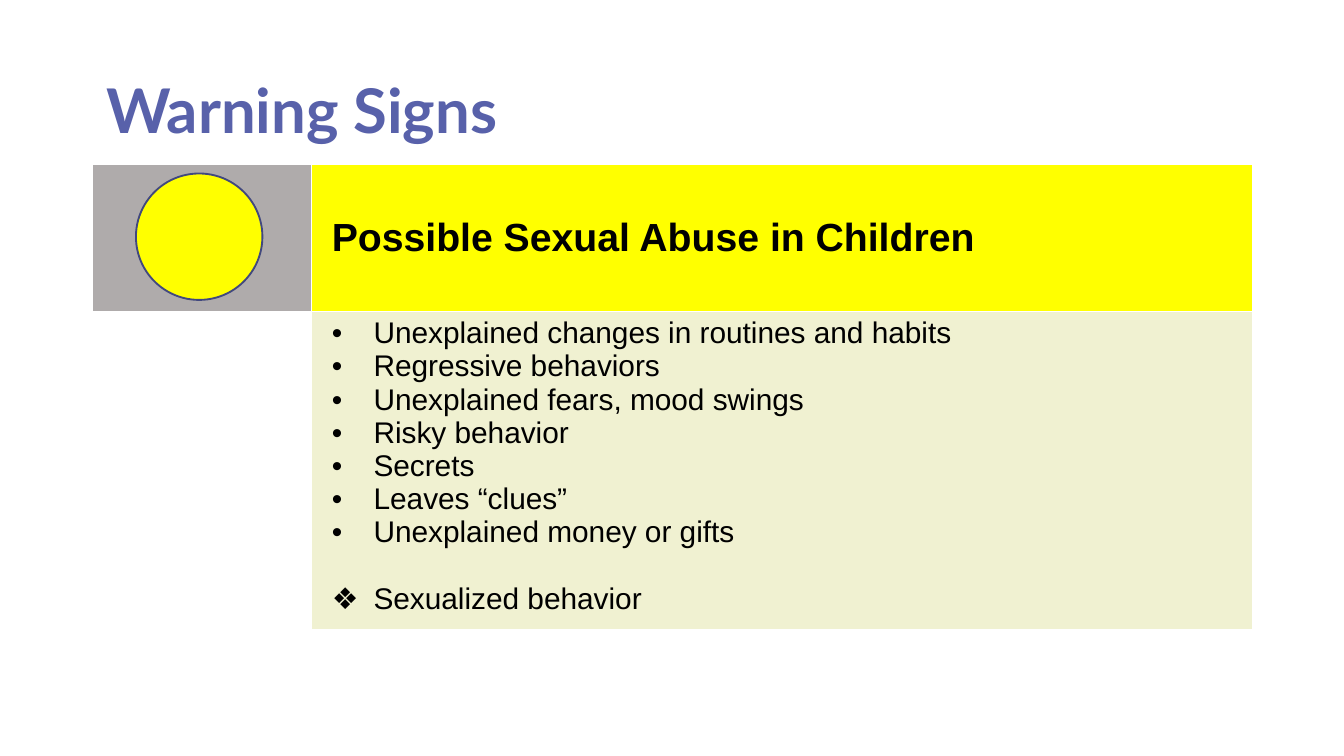
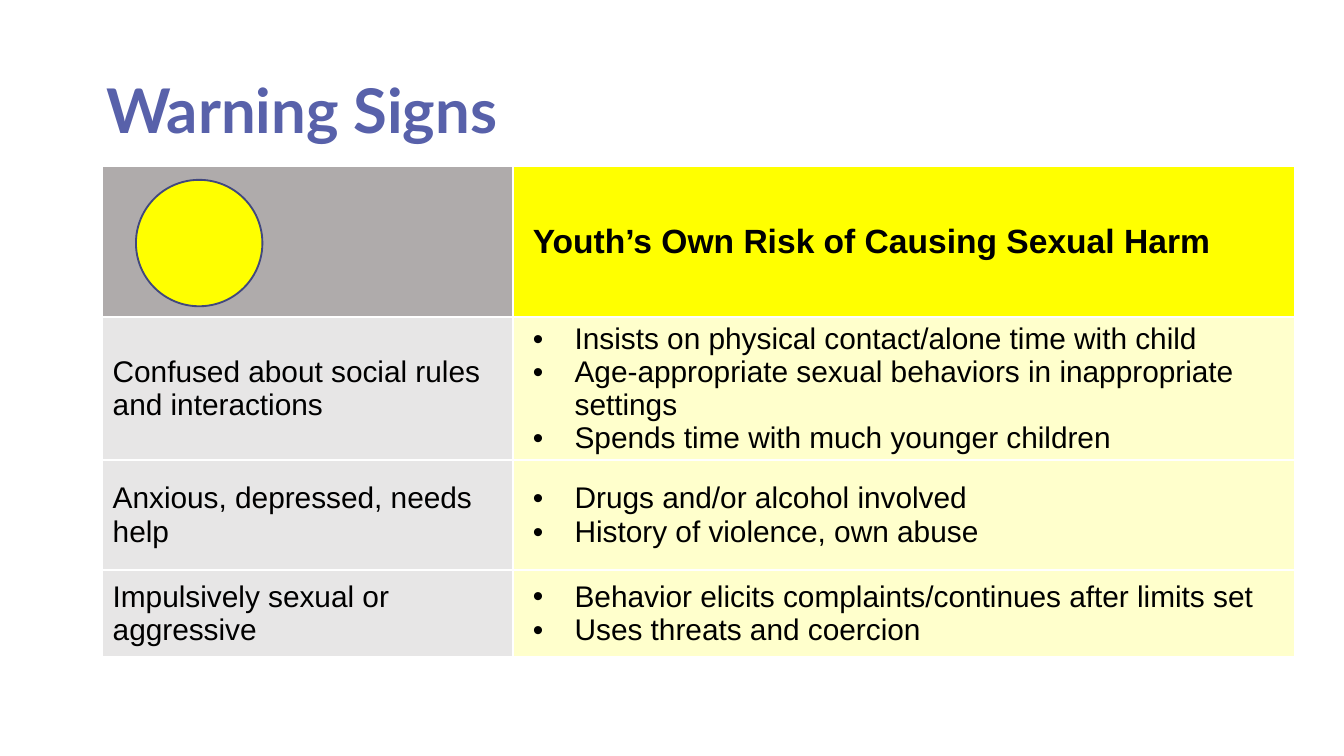
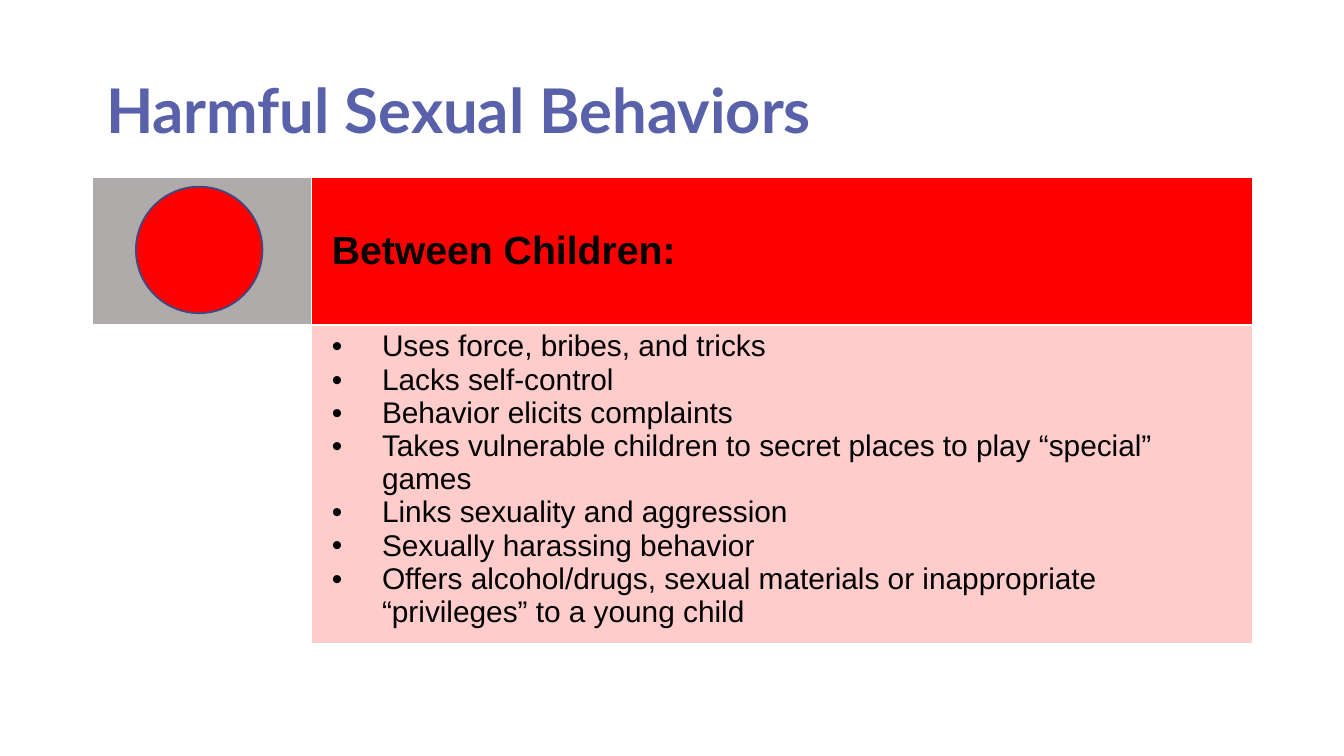
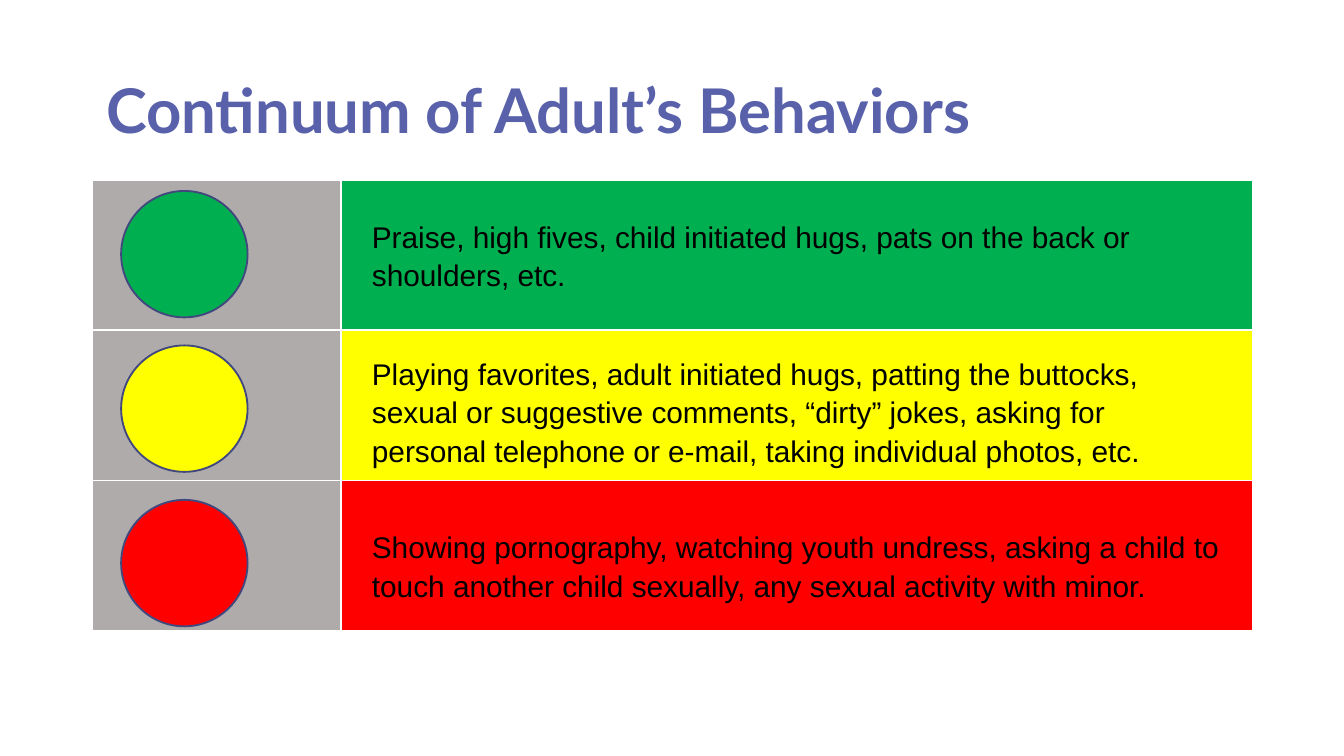
from dataclasses import dataclass

from lxml import etree
from pptx import Presentation
from pptx.dml.color import RGBColor
from pptx.enum import shapes, text
from pptx.oxml import ns
from pptx.util import Cm, Pt

INDIGO = RGBColor(0x58, 0x61, 0xAA)
NAVY = RGBColor(0x41, 0x48, 0x7E)
BLACK = RGBColor(0, 0, 0)
WHITE = RGBColor(0xFF, 0xFF, 0xFF)
GRAY = RGBColor(0xAF, 0xAB, 0xAB)
PALE = RGBColor(0xE7, 0xE6, 0xE6)
GREEN = RGBColor(0, 0xB0, 0x50)
YELLOW = RGBColor(0xFF, 0xFF, 0)
RED = RGBColor(0xFF, 0, 0)
OLIVE = RGBColor(0xB8, 0xB9, 0x1A)

LEFT = 1.75
LIGHT = 2.39
MIDDLE = text.MSO_ANCHOR.MIDDLE
TOP = text.MSO_ANCHOR.TOP


@dataclass
class Cell:
    fill: RGBColor | None = None
    lines: tuple[str, ...] = ()
    size: float = 16
    bold: bool = False
    tint: int = 100
    hang: float = 0
    inset: float = 0.38
    anchor: text.MSO_ANCHOR = MIDDLE
    mark: str = ""


@dataclass
class Grid:
    left: float
    top: float
    cols: tuple[float, ...]
    rows: tuple[float, ...]
    cells: list[list[Cell]]


@dataclass
class Note:
    top: float
    width: float
    height: float
    words: str


def add_sub(parent, tag: str, **attrs: str):
    return etree.SubElement(parent, ns.qn(tag), attrs)


def add_run(para, words: str, size: float, color=BLACK, font="Arial", bold=False) -> None:
    run = para.add_run()
    run.text = words
    run.font.size = Pt(size)
    run.font.name = font
    run.font.bold = bold
    run.font.color.rgb = color


def add_page(deck, title: str):
    slide = deck.slides.add_slide(deck.slide_layouts[5])
    head = slide.shapes.title
    head.left, head.top, head.width, head.height = Cm(LEFT), Cm(0.76), Cm(21.9), Cm(2.77)
    frame = head.text_frame
    frame.auto_size = text.MSO_AUTO_SIZE.NONE
    frame.vertical_anchor = MIDDLE
    para = frame.paragraphs[0]
    para.alignment = text.PP_ALIGN.LEFT
    para.line_spacing = 0.9
    add_run(para, title, 33, INDIGO, "Lato", True)
    return slide


def set_bullet(para, mark: str, hang: float) -> None:
    props = para._p.get_or_add_pPr()
    props.set("marL", str(Cm(hang)))
    props.set("indent", str(-Cm(hang)))
    add_sub(props, "a:buFont", typeface="Arial")
    add_sub(props, "a:buChar", char=mark)


def set_edges(cell) -> None:
    props = cell._tc.get_or_add_tcPr()
    for spot, side in enumerate("LRTB"):
        edge = etree.Element(ns.qn(f"a:ln{side}"), w=str(Pt(1)))
        add_sub(add_sub(edge, "a:solidFill"), "a:srgbClr", val=str(WHITE))
        props.insert(spot, edge)


def fill_cell(cell, data: Cell) -> None:
    if data.fill is None:
        cell.fill.background()
    else:
        cell.fill.solid()
        cell.fill.fore_color.rgb = data.fill
        if data.tint < 100:
            color = cell._tc.tcPr.find(".//" + ns.qn("a:srgbClr"))
            add_sub(color, "a:alpha", val=str(data.tint * 1000))
    set_edges(cell)
    cell.vertical_anchor = data.anchor
    cell.margin_left, cell.margin_right = Cm(data.inset), Cm(0.19)
    cell.margin_top = cell.margin_bottom = Cm(0.1)
    frame = cell.text_frame
    for spot, line in enumerate(data.lines):
        para = frame.add_paragraph() if spot else frame.paragraphs[0]
        last = bool(data.mark) and spot == len(data.lines) - 1
        if last:
            para.space_before = Pt(18)
        if data.hang:
            set_bullet(para, data.mark if last else "•", data.hang)
        add_run(para, line, data.size, bold=data.bold)


def add_grid(slide, grid: Grid) -> None:
    shape = slide.shapes.add_table(
        len(grid.rows), len(grid.cols), Cm(grid.left), Cm(grid.top),
        Cm(sum(grid.cols)), Cm(sum(grid.rows)))
    table = shape.table
    table.first_row = table.horz_banding = False
    for col, width in zip(table.columns, grid.cols):
        col.width = Cm(width)
    for row, height, cells in zip(table.rows, grid.rows, grid.cells):
        row.height = Cm(height)
        for cell, data in zip(row.cells, cells):
            fill_cell(cell, data)


def add_light(slide, left: float, top: float, color: RGBColor) -> None:
    light = slide.shapes.add_shape(
        shapes.MSO_SHAPE.OVAL, Cm(left), Cm(top), Cm(LIGHT), Cm(LIGHT))
    light.shadow.inherit = False
    light.fill.solid()
    light.fill.fore_color.rgb = color
    light.line.color.rgb = NAVY
    light.line.width = Pt(1)


def add_note(slide, note: Note) -> None:
    box = slide.shapes.add_textbox(Cm(6.78), Cm(note.top), Cm(note.width), Cm(note.height))
    frame = box.text_frame
    frame.word_wrap = True
    frame.auto_size = text.MSO_AUTO_SIZE.SHAPE_TO_FIT_TEXT
    para = frame.paragraphs[0]
    para.line_spacing = 1.07
    add_run(para, note.words, 16)


def add_signs(deck, title: str, top: float, color: RGBColor, head: str, body: Cell) -> None:
    slide = add_page(deck, title)
    body.anchor = TOP
    body.tint = 20
    add_grid(slide, Grid(LEFT, top, (4.14, 17.78), (2.79, 6.02), [
        [Cell(GRAY), Cell(color, (head,), 21, True)],
        [Cell(), body],
    ]))
    add_light(slide, 2.57, top + 0.18, color)


def add_risks(deck) -> None:
    slide = add_page(deck, "Warning Signs")
    risks = [
        ("Confused about social rules and interactions",
         ("Insists on physical contact/alone time with child",
          "Age-appropriate sexual behaviors in inappropriate settings",
          "Spends time with much younger children")),
        ("Anxious, depressed, needs help",
         ("Drugs and/or alcohol involved", "History of violence, own abuse")),
        ("Impulsively sexual or aggressive",
         ("Behavior elicits complaints/continues after limits set",
          "Uses threats and coercion")),
    ]
    head = [Cell(GRAY), Cell(YELLOW, ("Youth’s Own Risk of Causing Sexual Harm",), 18, True)]
    rows = [[Cell(PALE, (cause,), inset=0.19), Cell(YELLOW, signs, tint=20, hang=0.79)]
            for cause, signs in risks]
    add_grid(slide, Grid(1.94, 3.15, (7.75, 14.78), (2.84, 2.08, 2.08, 1.63), [head, *rows]))
    add_light(slide, 2.57, 3.4, YELLOW)


def add_scale(deck) -> None:
    slide = add_page(deck, "Continuum of Adult’s Behaviors")
    colors = (GREEN, YELLOW, RED)
    add_grid(slide, Grid(LEFT, 3.4, (4.7, 17.22), (2.84,) * 3,
                         [[Cell(GRAY), Cell(color)] for color in colors]))
    for spot, color in enumerate(colors):
        add_light(slide, 2.29, 3.61 + 2.92 * spot, color)
    notes = [
        Note(3.96, 16.26, 1.63,
             "Praise, high fives, child initiated hugs, pats on the back or shoulders, etc."),
        Note(6.55, 16.61, 2.31,
             "Playing favorites, adult initiated hugs, patting the buttocks, sexual or "
             "suggestive comments, “dirty” jokes, asking for personal telephone or e-mail, "
             "taking individual photos, etc."),
        Note(9.83, 16.61, 1.63,
             "Showing pornography, watching youth undress, asking a child to touch another "
             "child sexually, any sexual activity with minor."),
    ]
    for note in notes:
        add_note(slide, note)


def main() -> None:
    deck = Presentation()
    deck.slide_width, deck.slide_height = Cm(25.4), Cm(14.29)
    add_signs(deck, "Warning Signs", 3.1, YELLOW, "Possible Sexual Abuse in Children", Cell(
        OLIVE, (
            "Unexplained changes in routines and habits",
            "Regressive behaviors",
            "Unexplained fears, mood swings",
            "Risky behavior",
            "Secrets",
            "Leaves “clues”",
            "Unexplained money or gifts",
            "Sexualized behavior",
        ), hang=0.79, mark="❖"))
    add_risks(deck)
    add_signs(deck, "Harmful Sexual Behaviors", 3.35, RED, "Between Children:", Cell(
        RED, (
            "Uses force, bribes, and tricks",
            "Lacks self-control",
            "Behavior elicits complaints",
            "Takes vulnerable children to secret places to play “special” games",
            "Links sexuality and aggression",
            "Sexually harassing behavior",
            "Offers alcohol/drugs, sexual materials or inappropriate “privileges” "
            "to a young child",
        ), hang=0.95))
    add_scale(deck)
    deck.save("out.pptx")


if __name__ == "__main__":
    main()
